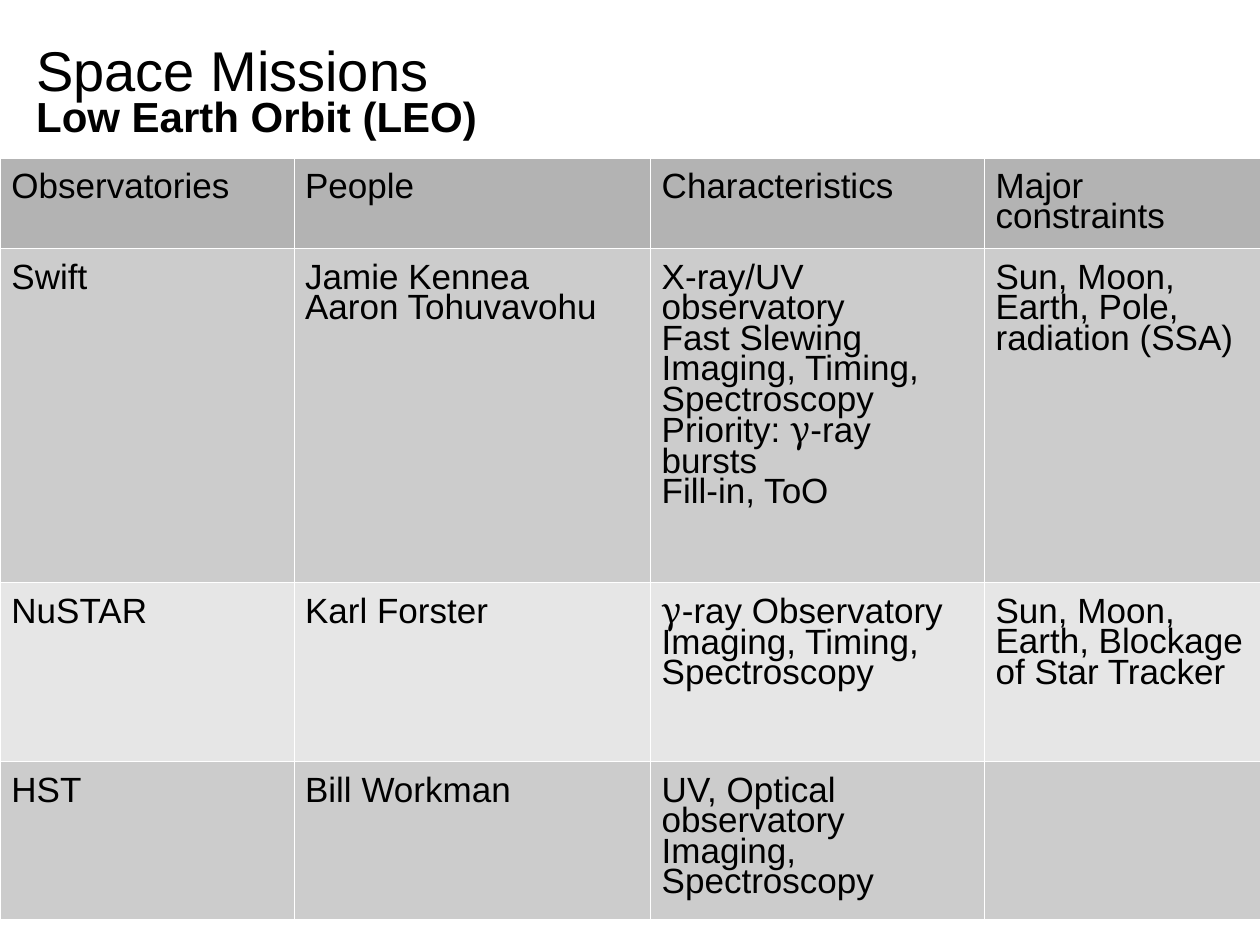
from dataclasses import dataclass

import pptx
import pptx.dml.color
import pptx.oxml
import pptx.oxml.ns
import pptx.util
from pptx.dml.color import RGBColor
from pptx.util import Cm

BLACK = RGBColor(0x00, 0x00, 0x00)
HEADER_GREY = RGBColor(0xB3, 0xB3, 0xB3)
MID_GREY = RGBColor(0xCC, 0xCC, 0xCC)
LIGHT_GREY = RGBColor(0xE6, 0xE6, 0xE6)
WHITE = RGBColor(0xFF, 0xFF, 0xFF)
GAMMA = "γ"


@dataclass
class Row:
    height: float
    fill: RGBColor
    cells: tuple[str, ...]  # one line per paragraph


COLUMN_WIDTHS = (5.92, 7.19, 6.73, 5.56)
ROWS = (
    Row(1.83, HEADER_GREY,
        ("Observatories", "People", "Characteristics", "Major constraints")),
    Row(6.73, MID_GREY,
        ("Swift",
         "Jamie Kennea\nAaron Tohuvavohu",
         "X-ray/UV observatory\nFast Slewing\nImaging, Timing, Spectroscopy\n"
         "Priority: γ-ray bursts\nFill-in, ToO",
         "Sun, Moon, Earth, Pole, radiation (SSA)")),
    Row(3.61, LIGHT_GREY,
        ("NuSTAR",
         "Karl Forster",
         "γ-ray Observatory\nImaging, Timing, Spectroscopy",
         "Sun, Moon, Earth, Blockage of Star Tracker")),
    Row(3.18, MID_GREY,
        ("HST",
         "Bill Workman",
         "UV, Optical observatory\nImaging, Spectroscopy",
         "")),
)


def add_text(p, text: str, *, size: float = 20, bold: bool = False,
             font: str = "Arial", color: RGBColor = BLACK,
             spacing: float = 0.78) -> None:
    """Fill a paragraph, setting each gamma in Cambria."""
    p.line_spacing = spacing
    before, gamma, after = text.partition(GAMMA)
    for part, name in ((before, font), (gamma, "Cambria"), (after, font)):
        if part:
            r = p.add_run()
            r.text = part
            r.font.name = name
            r.font.size = pptx.util.Pt(size)
            r.font.bold = bold
            r.font.color.rgb = color


def set_borders(cell, color: RGBColor, width: float) -> None:
    tc_pr = cell._tc.get_or_add_tcPr()
    for i, side in enumerate(("lnL", "lnR", "lnT", "lnB")):
        tc_pr.insert(i, pptx.oxml.parse_xml(
            f'<a:{side} {pptx.oxml.ns.nsdecls("a")} w="{pptx.util.Pt(width)}">'
            f'<a:solidFill><a:srgbClr val="{color}"/></a:solidFill></a:{side}>'))


def fill_cell(cell, text: str, fill: RGBColor) -> None:
    starts_gamma = text.startswith(GAMMA)
    cell.margin_left = cell.margin_right = Cm(0.23)
    cell.margin_top = Cm(0.28 if starts_gamma else 0.33)
    cell.margin_bottom = Cm(0.15)
    cell.fill.solid()
    cell.fill.fore_color.rgb = fill
    set_borders(cell, WHITE, 0.06)
    tf = cell.text_frame
    for i, line in enumerate(text.split("\n")):
        p = tf.add_paragraph() if i else tf.paragraphs[0]
        add_text(p, line, spacing=0.83 if line.startswith(GAMMA) else 0.78)


def add_title(s) -> None:
    sp = s.shapes.add_textbox(Cm(0.48), Cm(0.61), Cm(12.65), Cm(2.54))
    tf = sp.text_frame
    tf.word_wrap = False
    tf.margin_left = tf.margin_right = Cm(0.25)
    tf.margin_top, tf.margin_bottom = Cm(0.38), Cm(0.13)
    add_text(tf.paragraphs[0], "Space Missions", size=32)
    add_text(tf.add_paragraph(), "Low Earth Orbit (LEO)", size=24, bold=True)


def add_missions_table(s) -> None:
    table = s.shapes.add_table(
        len(ROWS), len(COLUMN_WIDTHS), Cm(0), Cm(3.18),
        Cm(sum(COLUMN_WIDTHS)), Cm(sum(row.height for row in ROWS))).table
    for column, width in zip(table.columns, COLUMN_WIDTHS):
        column.width = Cm(width)
    for i, row in enumerate(ROWS):
        table.rows[i].height = Cm(row.height)
        for j, text in enumerate(row.cells):
            fill_cell(table.cell(i, j), text, row.fill)


def main() -> None:
    prs = pptx.Presentation()
    prs.slide_width, prs.slide_height = Cm(25.4), Cm(19.05)
    s = prs.slides.add_slide(prs.slide_layouts[6])
    # Heading
    add_title(s)
    # Observatories
    add_missions_table(s)
    prs.save("out.pptx")


if __name__ == "__main__":
    main()
